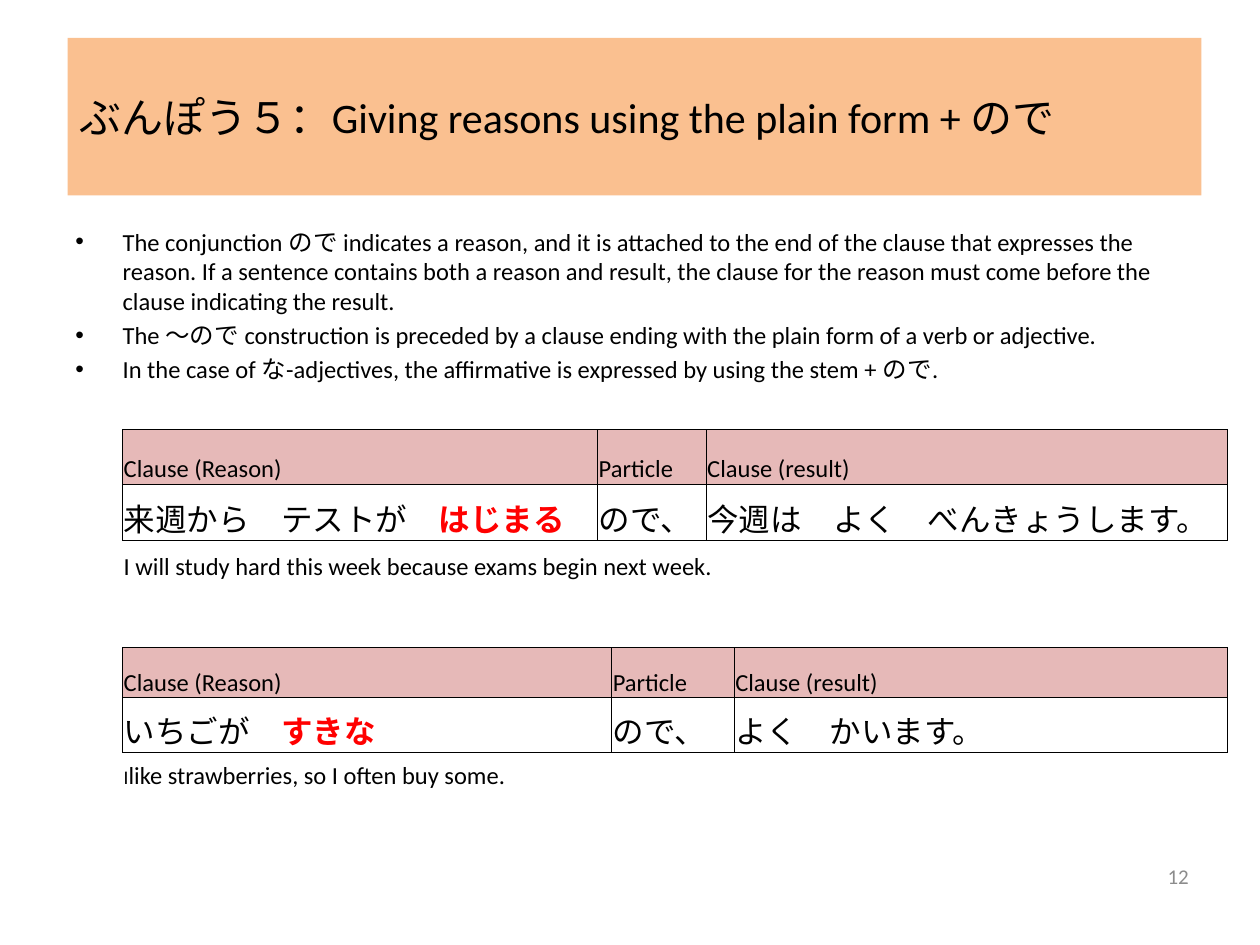
from lxml.etree import SubElement
from pptx import Presentation
from pptx.dml.color import RGBColor
from pptx.enum.shapes import MSO_SHAPE as Shape
from pptx.enum.text import MSO_ANCHOR as Anchor, PP_ALIGN as Align
from pptx.oxml.ns import qn
from pptx.util import Pt


def color(value):
    return RGBColor.from_string(value)


def apply(target, formats):
    for name, value in formats.items():
        setattr(target, name, value)


class SlideBuilder:
    black, gray, red = "000000", "8C8C8C", "FF0000"
    orange, pink = "FAC090", "E6B9B8"
    latin, japanese = "Calibri", "Lato"
    cell_format = {"vertical_anchor": Anchor.BOTTOM, "margin_left": Pt(0.7),
                   "margin_right": Pt(0.7), "margin_top": Pt(0.7), "margin_bottom": 0}

    def __init__(self, slide):
        self.slide = slide

    def run(self, paragraph, text, size, ink=black, font=latin, bold=False):
        run = paragraph.add_run()
        run.text = text
        apply(run.font, {"size": Pt(size), "name": font, "bold": bold})
        run.font.color.rgb = color(ink)

    def title(self, box, text):
        shape = self.slide.shapes.add_shape(Shape.RECTANGLE, *map(Pt, box))
        shape.shadow.inherit = False
        shape.fill.solid()
        shape.fill.fore_color.rgb = color(self.orange)
        shape.line.fill.background()
        apply(shape.text_frame, {"word_wrap": True, "vertical_anchor": Anchor.MIDDLE})
        paragraph = shape.text_frame.paragraphs[0]
        paragraph.alignment = Align.LEFT
        self.run(paragraph, text, 24)

    def text_frame(self, box, anchor):
        frame = self.slide.shapes.add_textbox(*map(Pt, box)).text_frame
        apply(frame, {"word_wrap": True, "vertical_anchor": anchor})
        return frame

    def page_number(self, box, text):
        paragraph = self.text_frame(box, Anchor.MIDDLE).paragraphs[0]
        paragraph.alignment = Align.RIGHT
        self.run(paragraph, text, 12, self.gray)

    def bullets(self, box, texts):
        frame = self.text_frame(box, Anchor.TOP)
        for index, text in enumerate(texts):
            paragraph = frame.add_paragraph() if index else frame.paragraphs[0]
            paragraph.space_before = Pt(2.8)
            properties = paragraph._p.get_or_add_pPr()
            properties.set("marL", str(Pt(27)))
            properties.set("indent", str(Pt(-27)))
            SubElement(properties, qn("a:buFont"), typeface="Arial")
            SubElement(properties, qn("a:buChar"), char="•")
            self.run(paragraph, text, 14)

    def borders(self, cell, visible):
        properties = cell._tc.get_or_add_tcPr()
        for index, side in enumerate(("lnL", "lnR", "lnT", "lnB")):
            line = SubElement(properties, qn(f"a:{side}"), w=str(Pt(0.5)))
            if side in visible:
                fill = SubElement(line, qn("a:solidFill"))
                SubElement(fill, qn("a:srgbClr"), val=self.black)
            else:
                SubElement(line, qn("a:noFill"))
            properties.insert(index, line)

    def sentence_table(self, top, widths, heights, clauses, translation, merged=False):
        frame = self.slide.shapes.add_table(
            len(heights), len(widths), Pt(70), Pt(top), Pt(sum(widths)), Pt(sum(heights)))
        table = frame.table
        apply(table, {"first_row": False, "horz_banding": False})
        for column, width in zip(table.columns, widths):
            column.width = Pt(width)
        for row, height in zip(table.rows, heights):
            row.height = Pt(height)

        headings = [[(text, 14)] for text in ("Clause (Reason)", "Particle", "Clause (result)")]
        rows = [headings, clauses, [translation, [], []]]
        for row_index, contents in enumerate(rows):
            for column_index, runs in enumerate(contents):
                cell = table.cell(row_index, column_index)
                apply(cell, self.cell_format)
                if row_index == 0:
                    cell.fill.solid()
                    cell.fill.fore_color.rgb = color(self.pink)
                else:
                    cell.fill.background()
                self.borders(cell, ("lnT",) if row_index == 2 else ("lnL", "lnR", "lnT", "lnB"))
                for run in runs:
                    self.run(cell.text_frame.paragraphs[0], *run)
        if merged:
            table.cell(2, 0).merge(table.cell(2, 2))


def clause(plain, stressed=""):
    """Runs of a Japanese clause, with its stressed ending in bold red."""
    style = SlideBuilder
    runs = [(plain, 18, style.black, style.japanese)]
    if stressed:
        runs.append((stressed, 18, style.red, style.japanese, True))
    return runs


def main():
    presentation = Presentation()
    apply(presentation, {"slide_width": Pt(720), "slide_height": Pt(540)})
    builder = SlideBuilder(presentation.slides.add_slide(presentation.slide_layouts[6]))

    # Page number and heading
    builder.page_number((518.4, 486, 168, 28.8), "12")
    builder.title((38.6, 21.6, 648, 90), "ぶんぽう５：Giving reasons using the plain form + ので")

    # Grammar rules
    builder.bullets((36, 126, 648, 356.4), [
        "The conjunction ので indicates a reason, and it is attached to the end of the clause "
        "that expresses the reason. If a sentence contains both a reason and result, the clause "
        "for the reason must come before the clause indicating the result.",
        "The ～ので construction is preceded by a clause ending with the plain form of a verb "
        "or adjective.",
        "In the case of な-adjectives, the affirmative is expressed by using the stem + ので.",
    ])

    # Example sentences
    builder.sentence_table(
        245.5, (271.5, 62, 298), (31.3, 32.2, 23.8),
        [clause("来週から　テストが　", "はじまる"), clause("ので、"),
         clause("今週は　よく　べんきょうします。")],
        [("I will study hard this week because exams begin next week.", 14)], merged=True)
    builder.sentence_table(
        370, (279.5, 70, 282), (28.6, 31.3, 22.3),
        [clause("いちごが　", "すきな"), clause("ので、"), clause("よく　かいます。")],
        [("I", 11), ("like strawberries, so I often buy some.", 14)])

    presentation.save("out.pptx")


if __name__ == "__main__":
    main()
